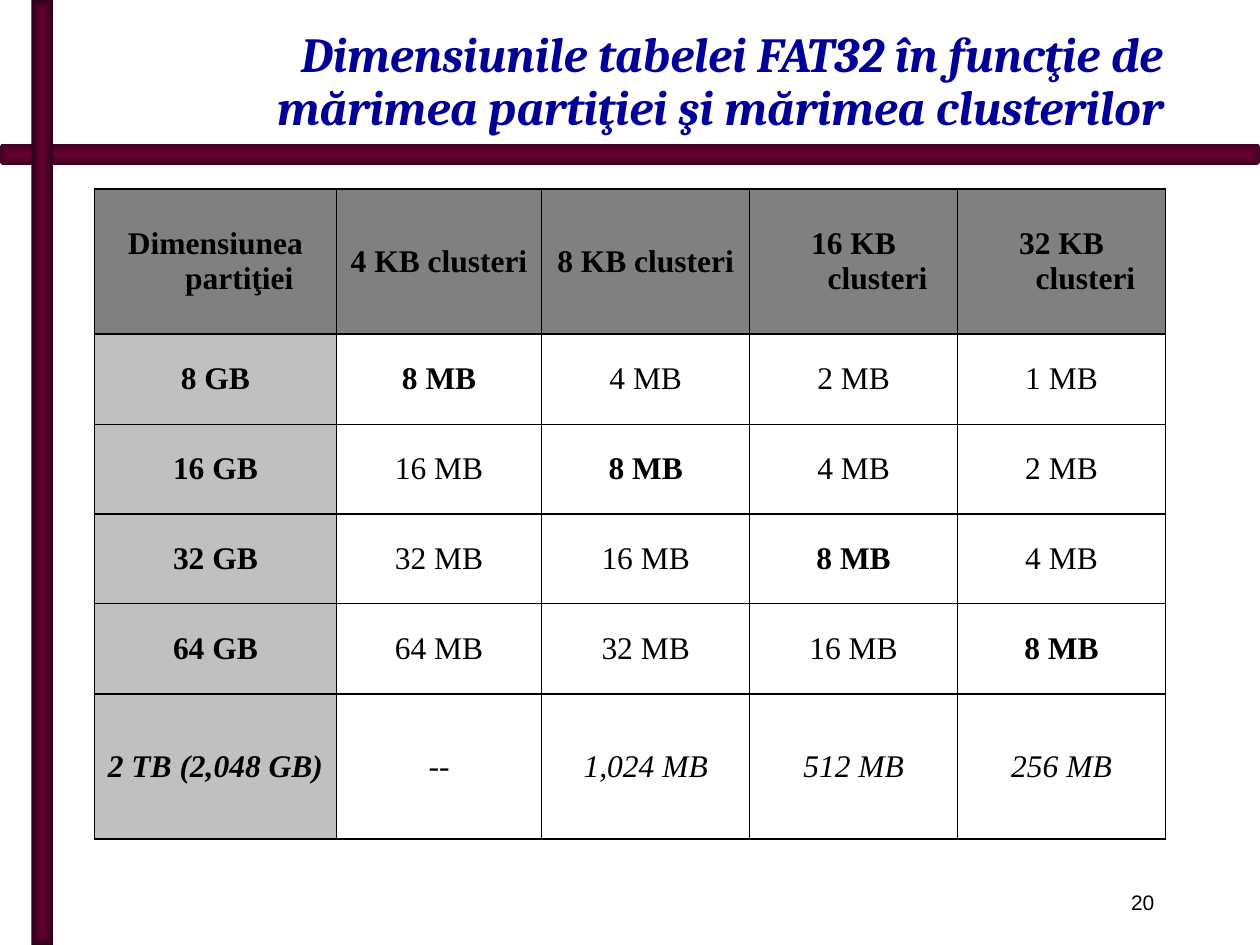
from lxml import etree
from pptx import Presentation
from pptx.dml.color import RGBColor
from pptx.enum.shapes import MSO_SHAPE
from pptx.enum.text import MSO_ANCHOR, MSO_AUTO_SIZE, PP_ALIGN
from pptx.oxml.ns import qn
from pptx.util import Inches, Pt

RIGHT, CENTER = PP_ALIGN.RIGHT, PP_ALIGN.CENTER
MIDDLE, BOTTOM = MSO_ANCHOR.MIDDLE, MSO_ANCHOR.BOTTOM
RECT, ROUND = MSO_SHAPE.RECTANGLE, MSO_SHAPE.ROUNDED_RECTANGLE
FIXED = MSO_AUTO_SIZE.NONE

BLACK = RGBColor(0x00, 0x00, 0x00)
NAVY = RGBColor(0x00, 0x00, 0x99)
GRAY = RGBColor(0x80, 0x80, 0x80)
SILVER = RGBColor(0xC0, 0xC0, 0xC0)
WINE = RGBColor(0x66, 0x00, 0x33)
PLUM = RGBColor(0x41, 0x00, 0x20)
DARK = RGBColor(0x2F, 0x00, 0x18)

HEAD = ["Dimensiunea partiţiei", "4 KB clusteri", "8 KB clusteri",
        "16 KB clusteri", "32 KB clusteri"]
ROWS = [
    HEAD,
    ["8 GB", "8 MB", "4 MB", "2 MB", "1 MB"],
    ["16 GB", "16 MB", "8 MB", "4 MB", "2 MB"],
    ["32 GB", "32 MB", "16 MB", "8 MB", "4 MB"],
    ["64 GB", "64 MB", "32 MB", "16 MB", "8 MB"],
    ["2 TB (2,048 GB)", "--", "1,024 MB", "512 MB", "256 MB"],
]
WIDTHS = [1.92, 1.63, 1.65, 1.65, 1.65]
HEIGHTS = [1.15, 0.72, 0.71, 0.71, 0.72, 1.15]


def write(frame, text, font="Arial", size=18, color=BLACK, bold=False,
          italic=False, align=CENTER, spacing=None, hang=0):
    para = frame.paragraphs[0]
    para.alignment = align
    if spacing:
        para.line_spacing = spacing
    if hang:
        props = para._p.get_or_add_pPr()
        props.set("marL", str(Inches(hang)))
        props.set("indent", str(-Inches(hang)))
    run = para.add_run()
    run.text = text
    run.font.name = font
    run.font.size = Pt(size)
    run.font.bold = bold
    run.font.italic = italic
    run.font.color.rgb = color


class Deck:
    serif = "Times New Roman"
    head = "Cambria"

    def __init__(self):
        self.prs = Presentation()
        self.prs.slide_width = Inches(10)
        self.prs.slide_height = Inches(7.5)
        self.slide = self.prs.slides.add_slide(self.prs.slide_layouts[5])

    def bar(self, kind, box, inner, outer):
        shape = self.slide.shapes.add_shape(kind, *map(Inches, box))
        shape.shadow.inherit = False
        shape.line.fill.background()
        shape.fill.gradient()
        for stop, color in zip(shape.fill.gradient_stops, (inner, outer)):
            stop.color.rgb = color
        # Spread the gradient from the centre to the edges
        grad = shape._element.spPr.find(qn("a:gradFill"))
        grad.remove(grad.find(qn("a:lin")))
        path = etree.SubElement(grad, qn("a:path"), path="shape")
        etree.SubElement(path, qn("a:fillToRect"),
                         {side: "50000" for side in "ltrb"})

    def title(self, text, box):
        shape = self.slide.shapes.title
        shape.left, shape.top, shape.width, shape.height = map(Inches, box)
        frame = shape.text_frame
        frame.auto_size = FIXED
        frame.word_wrap = True
        frame.vertical_anchor = BOTTOM
        write(frame, text, font=self.head, size=28, color=NAVY, bold=True,
              italic=True, align=RIGHT, spacing=0.9)

    def label(self, text, box, **style):
        frame = self.slide.shapes.add_textbox(*map(Inches, box)).text_frame
        frame.word_wrap = True
        write(frame, text, **style)

    def border(self, cell):
        props = cell._tc.get_or_add_tcPr()
        for spot, side in enumerate(("lnL", "lnR", "lnT", "lnB")):
            line = etree.Element(qn("a:" + side), w=str(Pt(1)))
            fill = etree.SubElement(line, qn("a:solidFill"))
            etree.SubElement(fill, qn("a:srgbClr"), val=str(BLACK))
            props.insert(spot, line)

    def table(self, rows, widths, heights, left, top):
        table = self.slide.shapes.add_table(
            len(rows), len(widths), Inches(left), Inches(top),
            Inches(sum(widths)), Inches(sum(heights))).table
        table.first_row = table.horz_banding = False
        for col, width in zip(table.columns, widths):
            col.width = Inches(width)
        for row, height in zip(table.rows, heights):
            row.height = Inches(height)
        last = len(rows) - 1
        for r, row in enumerate(rows):
            for c, text in enumerate(row):
                cell = table.cell(r, c)
                cell.vertical_anchor = MIDDLE
                if r == 0 or c == 0:
                    cell.fill.solid()
                    cell.fill.fore_color.rgb = GRAY if r == 0 else SILVER
                else:
                    cell.fill.background()
                self.border(cell)
                # Headings and the 8 MB diagonal are bold
                write(cell.text_frame, text, font=self.serif,
                      bold=r == 0 or c == 0 or r == c,
                      italic=r == last and text != "--", hang=0.38)


def main():
    deck = Deck()
    # Crossed bars
    deck.bar(ROUND, (0, 1.14, 10, 0.17), WINE, PLUM)
    deck.bar(RECT, (0.25, 0, 0.17, 7.5), WINE, DARK)
    # Title and page number
    deck.title("Dimensiunile tabelei FAT32 în funcţie de mărimea partiţiei "
               "şi mărimea clusterilor", (0.83, 0.17, 8.5, 0.96))
    deck.label("20", (0.75, 7.01, 8.51, 0.3), size=12, align=RIGHT)
    # Table of FAT sizes
    deck.table(ROWS, WIDTHS, HEIGHTS, 0.75, 1.5)
    deck.prs.save("out.pptx")


if __name__ == "__main__":
    main()
